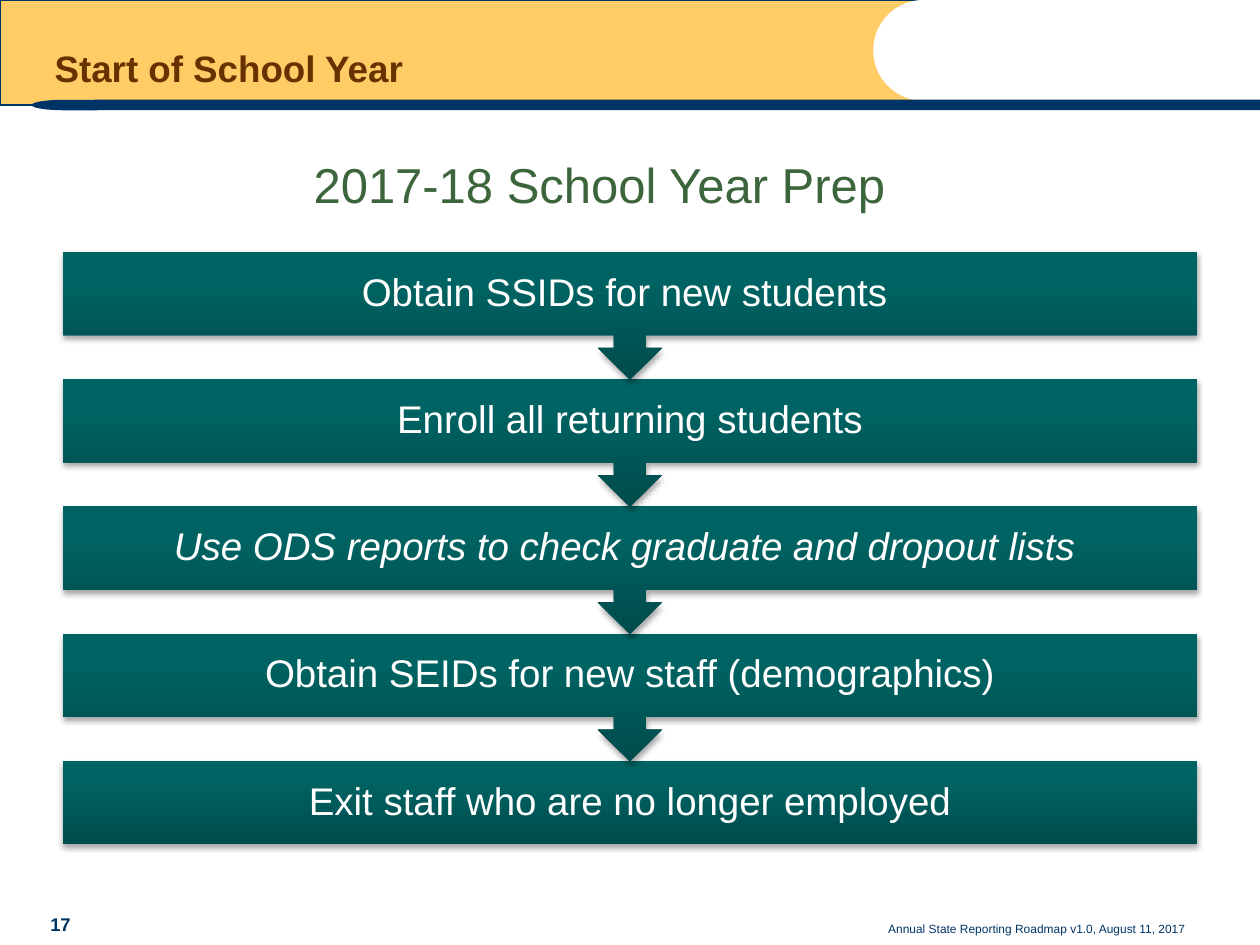
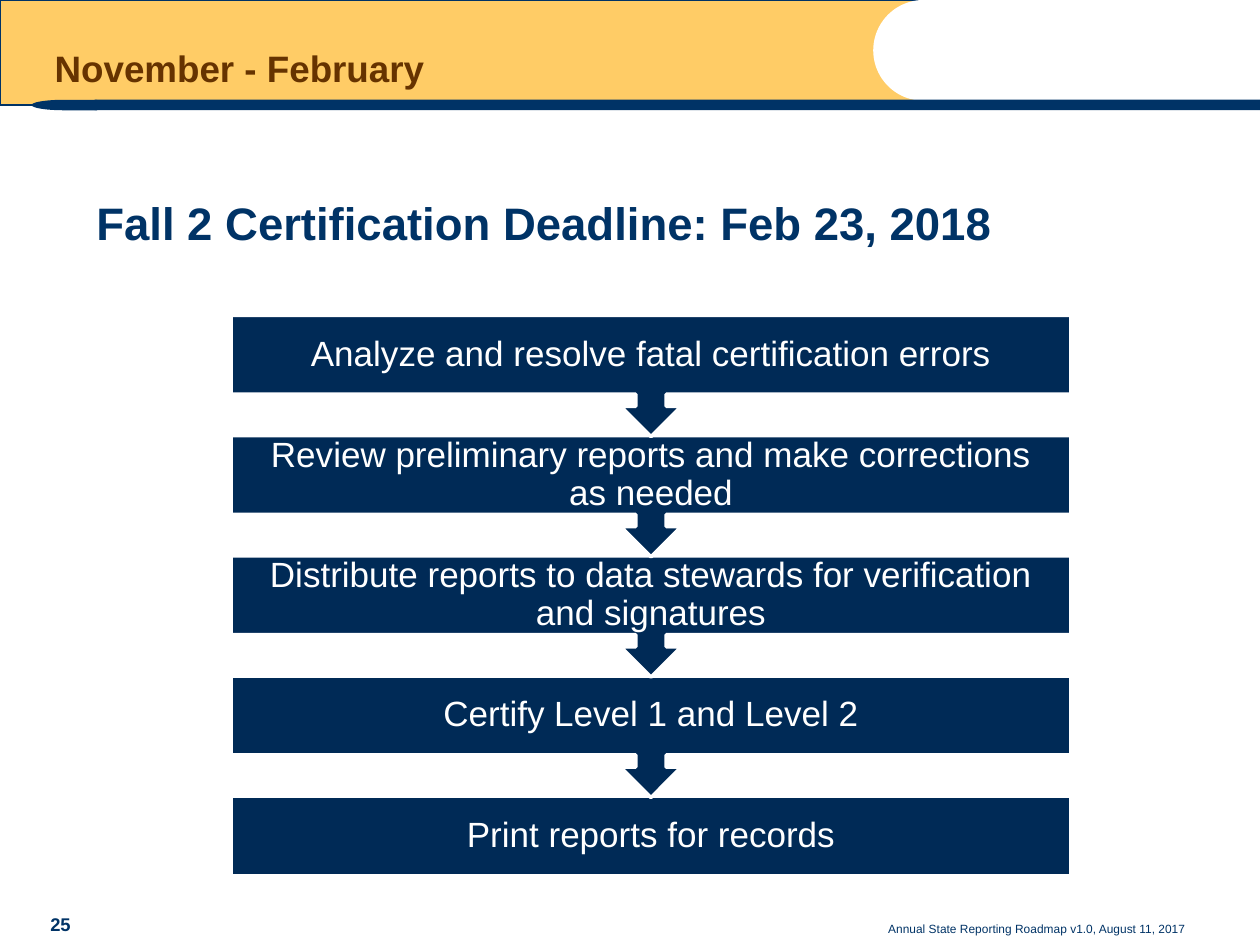
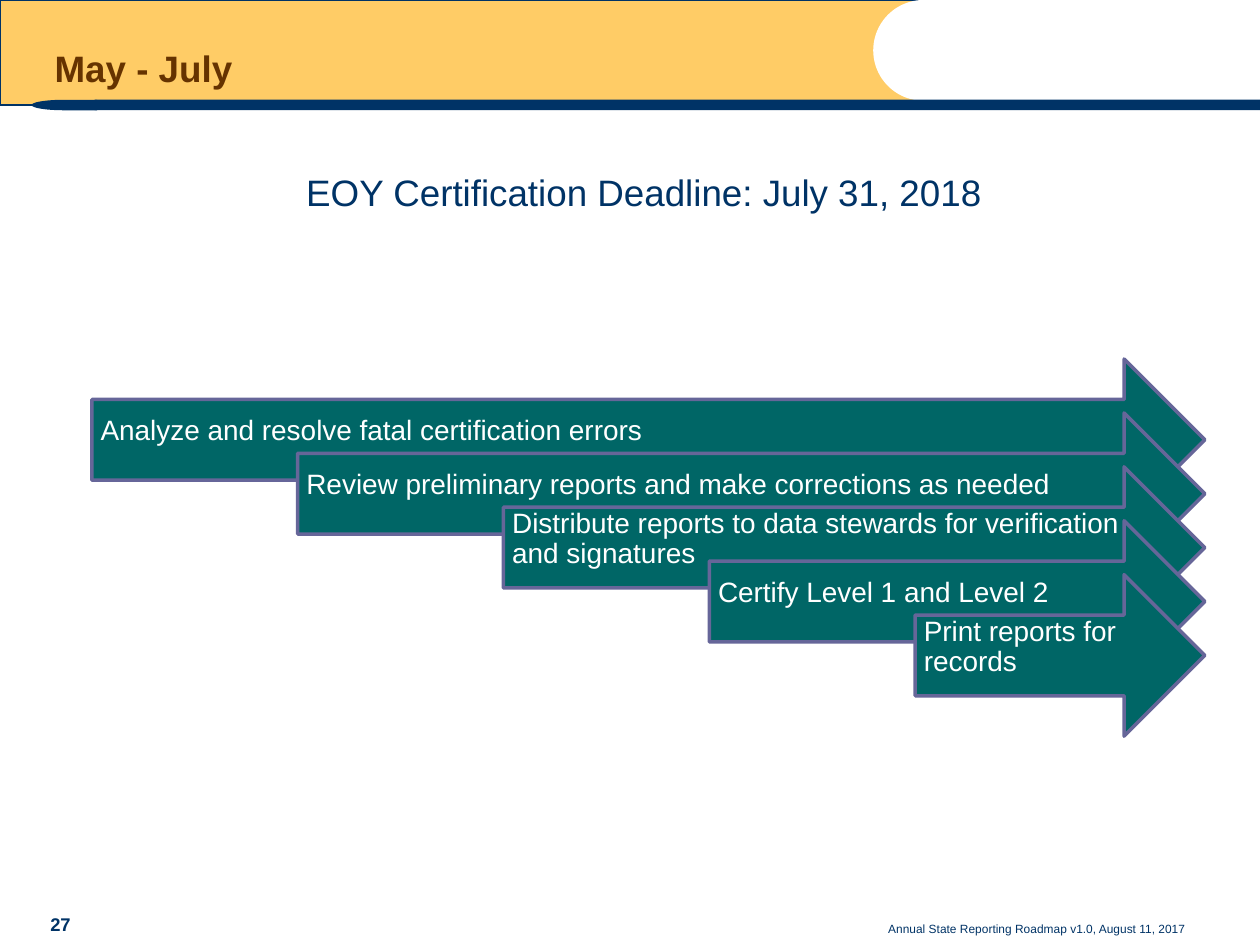
from lxml.etree import SubElement
from pptx import Presentation
from pptx.dml.color import RGBColor
from pptx.enum.shapes import MSO_SHAPE
from pptx.enum.text import MSO_ANCHOR, PP_ALIGN
from pptx.oxml.ns import qn
from pptx.util import Pt

FONT = "Arial"
NAVY, DEEP, GOLD, BROWN = "003366", "002A56", "FFCC66", "663300"
WHITE, GREEN, TEAL, PLUM = "FFFFFF", "3C653C", "006666", "666699"
DARK, LIGHT = "004C4C", "006363"
FOOTER = "Annual State Reporting Roadmap v1.0, August 11, 2017"

PREP = [
    "Obtain SSIDs for new students ",
    "Enroll all returning students",
    "Use ODS reports to check graduate and dropout lists ",
    "Obtain SEIDs for new staff (demographics)",
    "Exit staff who are no longer employed",
]
CERTIFY = [
    "Analyze and resolve fatal certification errors",
    "Review preliminary reports and make corrections as needed",
    "Distribute reports to data stewards for verification and signatures",
    "Certify Level 1 and Level 2",
    "Print reports for records",
]


def color(code):
    """Turn a hex string into a colour."""
    return RGBColor.from_string(code)


def write(shape, text, size, ink, align=PP_ALIGN.LEFT, anchor=MSO_ANCHOR.TOP,
          bold=False, italic=False, tight=False, inset=None):
    """Put one formatted paragraph into a shape."""
    frame = shape.text_frame
    frame.word_wrap = True
    frame.vertical_anchor = anchor
    if inset:
        (frame.margin_left, frame.margin_top,
         frame.margin_right, frame.margin_bottom) = map(Pt, inset)
    para = frame.paragraphs[0]
    para.text = text
    para.alignment = align
    if tight:
        para.line_spacing = 0.9
    font = para.font
    font.name, font.size, font.bold, font.italic = FONT, Pt(size), bold, italic
    font.color.rgb = color(ink)


def draw(slide, kind, box, fill=None, line=None, width=2):
    """Add a preset shape with a plain fill and an optional line."""
    shape = slide.shapes.add_shape(kind, *map(Pt, box))
    shape.shadow.inherit = False
    if fill:
        shape.fill.solid()
        shape.fill.fore_color.rgb = color(fill)
    if line:
        shape.line.color.rgb = color(line)
        shape.line.width = Pt(width)
    else:
        shape.line.fill.background()
    return shape


def label(slide, box, *args, **style):
    """Add a text box."""
    write(slide.shapes.add_textbox(*map(Pt, box)), *args, **style)


def shade(shape):
    """Give a shape the teal gradient and a soft shadow below."""
    shape.fill.gradient()
    shape.fill.gradient_angle = 90
    for stop, code, place in zip(shape.fill.gradient_stops, (DARK, LIGHT), (0, 0.8)):
        stop.color.rgb = color(code)
        stop.position = place
    effects = shape.element.spPr.find(qn("a:effectLst"))
    shadow = SubElement(effects, qn("a:outerShdw"), blurRad=str(Pt(3.1)),
                        dist=str(Pt(1.8)), dir="5400000", rotWithShape="0")
    tint = SubElement(shadow, qn("a:srgbClr"), val="000000")
    SubElement(tint, qn("a:alpha"), val="35000")


def start(deck, title, number):
    """Add a slide with its bands, title, footer and number."""
    slide = deck.slides.add_slide(deck.slide_layouts[5])
    draw(slide, MSO_SHAPE.RECTANGLE, (0, 0, 528, 60), GOLD, NAVY, 0.75)
    draw(slide, MSO_SHAPE.OVAL, (499, 0, 57.6, 57.6), WHITE)
    draw(slide, MSO_SHAPE.RECTANGLE, (54, 57, 666, 6), NAVY)
    draw(slide, MSO_SHAPE.FLOWCHART_DELAY, (18, 57, 37.5, 6), NAVY).rotation = 180
    head = slide.shapes.title
    head.left, head.top, head.width, head.height = map(Pt, (24, 13.7, 432, 41.8))
    write(head, title, 21, BROWN, anchor=MSO_ANCHOR.BOTTOM, bold=True, tight=True)
    slide.shapes.element.append(head.element)
    label(slide, (300, 509.8, 384.5, 28.8), FOOTER, 6.8, NAVY,
          align=PP_ALIGN.RIGHT, anchor=MSO_ANCHOR.BOTTOM)
    label(slide, (11.5, 511.2, 46, 26.6), str(number), 10.5, NAVY,
          align=PP_ALIGN.CENTER, anchor=MSO_ANCHOR.BOTTOM, bold=True)
    return slide


def chain(slide, box, steps, tall, size, pad, fill=None, line=None, slant=None):
    """Stack the steps in a box, each callout pointing to the next."""
    left, top, width, height = box
    body = tall * 0.65
    pitch = (height - body) / (len(steps) - 1)
    last = len(steps) - 1
    for i, step in reversed(list(enumerate(steps))):
        kind, deep = MSO_SHAPE.DOWN_ARROW_CALLOUT, tall
        if i == last:
            kind, deep = MSO_SHAPE.RECTANGLE, body
        shape = draw(slide, kind, (left, top + i * pitch, width, deep), fill, line)
        if not fill:
            shade(shape)
        write(shape, step, size, WHITE, align=PP_ALIGN.CENTER,
              anchor=MSO_ANCHOR.MIDDLE, italic=i == slant, tight=True,
              inset=(pad,) * 4)


def cascade(slide, box, steps, tall, shift):
    """Lay arrows down a box, each starting further right."""
    left, top, width, height = box
    drop = (height - tall) / (len(steps) - 1)
    for i, step in enumerate(steps):
        spot = (left + i * shift, top + i * drop, width - i * shift, tall)
        arrow = draw(slide, MSO_SHAPE.RIGHT_ARROW, spot, TEAL, PLUM)
        write(arrow, step, 16, WHITE, anchor=MSO_ANCHOR.MIDDLE, tight=True,
              inset=(5, 5, 20, 14.4))


def main():
    """Build the three slides."""
    deck = Presentation()
    deck.slide_width, deck.slide_height = Pt(720), Pt(540)

    slide = start(deck, "Start of School Year", 17)
    chain(slide, (36, 144, 648, 338.4), PREP, 73.2, 22, 12.2, slant=2)
    label(slide, (135.4, 85, 414, 41), "2017-18 School Year Prep", 28, GREEN,
          align=PP_ALIGN.CENTER)

    slide = start(deck, "November - February", 25)
    label(slide, (48, 108, 648, 372), "Fall 2 Certification Deadline: Feb 23, 2018",
          26, NAVY, bold=True)
    chain(slide, (132, 180.2, 480, 320), CERTIFY, 69.3, 20, 11.5, DEEP, WHITE)

    slide = start(deck, "May - July", 27)
    label(slide, (44, 93.6, 648, 43.2), "EOY Certification Deadline: July 31, 2018",
          21, NAVY, align=PP_ALIGN.CENTER)
    cascade(slide, (52.5, 205.2, 636, 215.5), CERTIFY, 92.3, 117.6)

    deck.save("out.pptx")


if __name__ == "__main__":
    main()
